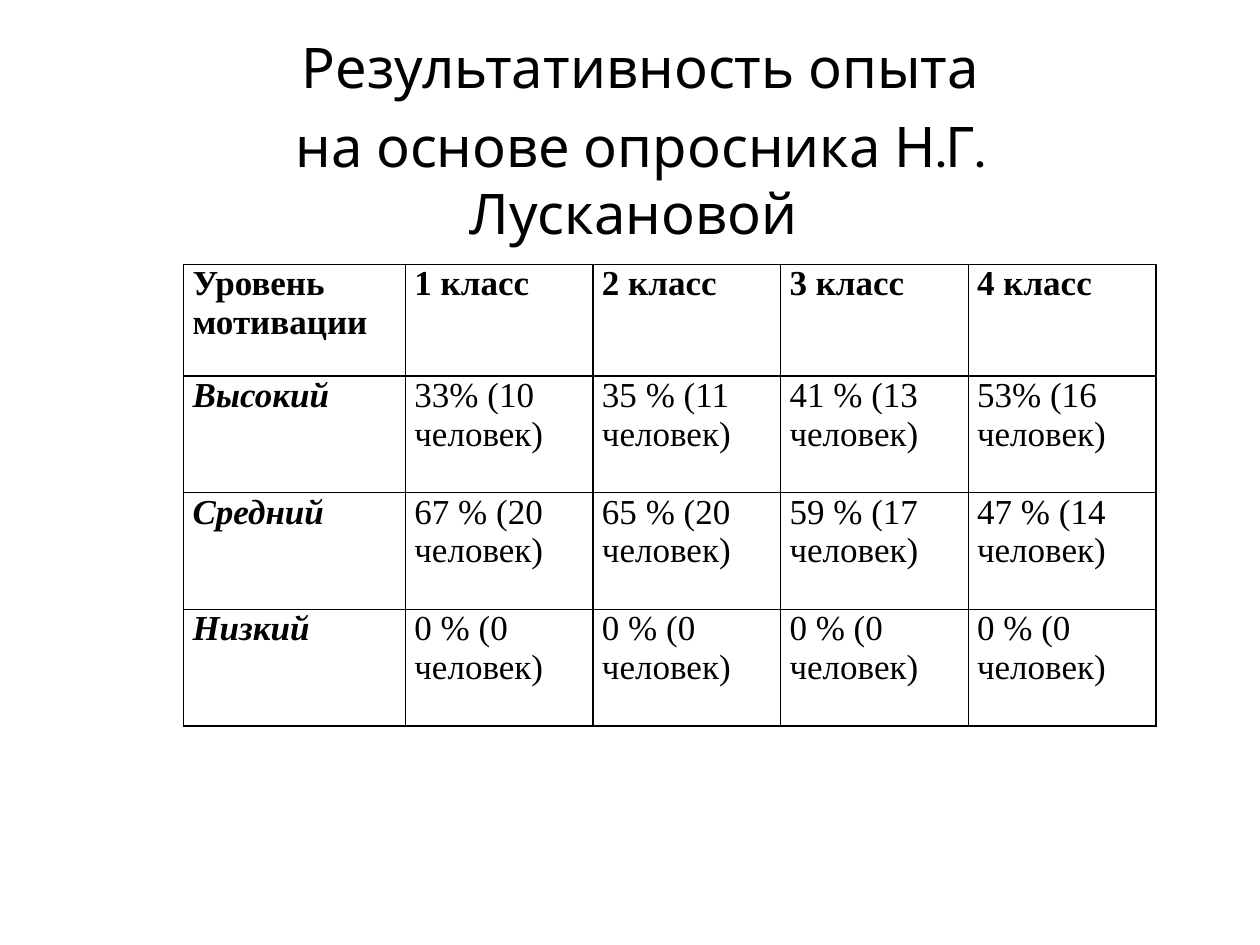
from pptx import Presentation
from pptx.dml.color import RGBColor
from pptx.enum.text import PP_ALIGN
from pptx.oxml import parse_xml
from pptx.oxml.ns import nsdecls
from pptx.util import Pt

HUES = {"ink": "000000", "page": "FFFFFF"}
HEAD = ["Результативность опыта", "на основе опросника Н.Г. Лускановой "]
ROWS = [
    ["Уровень мотивации", "1 класс", "2 класс", "3 класс", "4 класс"],
    ["Высокий ", "33% (10 человек)", "35 % (11 человек)", "41 % (13 человек)", "53% (16 человек)"],
    ["Средний ", "67 % (20 человек)", "65 % (20 человек)", "59 % (17 человек)", "47 % (14 человек)"],
    ["Низкий "] + ["0 % (0 человек)"] * 4,
]


class Deck:
    """Hold the style and the current slide."""

    def __init__(self, wide, high):
        self.show = Presentation()
        self.show.slide_width, self.show.slide_height = Pt(wide), Pt(high)
        self.slide = self.show.slides.add_slide(self.show.slide_layouts[6])
        self.title = {"name": "Karla", "size": Pt(32)}
        self.body = {"name": "Times New Roman", "size": Pt(20)}

    def style(self, para, form):
        for key, value in form.items():
            setattr(para.font, key, value)
        para.font.color.rgb = RGBColor.from_string(HUES["ink"])

    def text(self, box, lines):
        frame = self.slide.shapes.add_textbox(*map(Pt, box)).text_frame
        frame.word_wrap = True
        for num, line in enumerate(lines):
            para = frame.add_paragraph() if num else frame.paragraphs[0]
            para.text, para.alignment = line, PP_ALIGN.CENTER
            para.space_before = Pt(6.4 if num else 0)
            self.style(para, self.title)

    def edge(self, cell):
        props = cell._tc.get_or_add_tcPr()
        for num, side in enumerate(("lnL", "lnR", "lnT", "lnB")):
            props.insert(num, parse_xml(
                f'<a:{side} {nsdecls("a")} w="{Pt(1)}"><a:solidFill>'
                f'<a:srgbClr val="{HUES["ink"]}"/></a:solidFill></a:{side}>'))

    def cell(self, cell, words, form, align):
        pads = {"margin_left": 5.04, "margin_right": 5.04, "margin_top": 0, "margin_bottom": 0}
        for key, value in pads.items():
            setattr(cell, key, Pt(value))
        cell.fill.solid()
        cell.fill.fore_color.rgb = RGBColor.from_string(HUES["page"])
        self.edge(cell)
        para = cell.text_frame.paragraphs[0]
        para.text, para.alignment = words, align
        self.style(para, self.body | form)

    def table(self, spot, cols, highs, rows):
        size = (sum(cols), sum(highs))
        grid = self.slide.shapes.add_table(len(rows), len(cols), *map(Pt, spot + size)).table
        for col, wide in zip(grid.columns, cols):
            col.width = Pt(wide)
        for row, high in zip(grid.rows, highs):
            row.height = Pt(high)
        for r, row in enumerate(rows):
            for c, words in enumerate(row):
                label = r == 0 or c == 0
                form = {"bold": label, "italic": r > 0 and c == 0}
                align = PP_ALIGN.JUSTIFY if label else PP_ALIGN.LEFT
                self.cell(grid.cell(r, c), words, form, align)


def main():
    deck = Deck(720, 540)
    deck.text((65.5, 15.1, 601.2, 138.2), HEAD)
    deck.table((105, 151), [126.8] + [107.2] * 4, [64] + [66.6] * 3, ROWS)
    deck.show.save("out.pptx")


if __name__ == "__main__":
    main()
